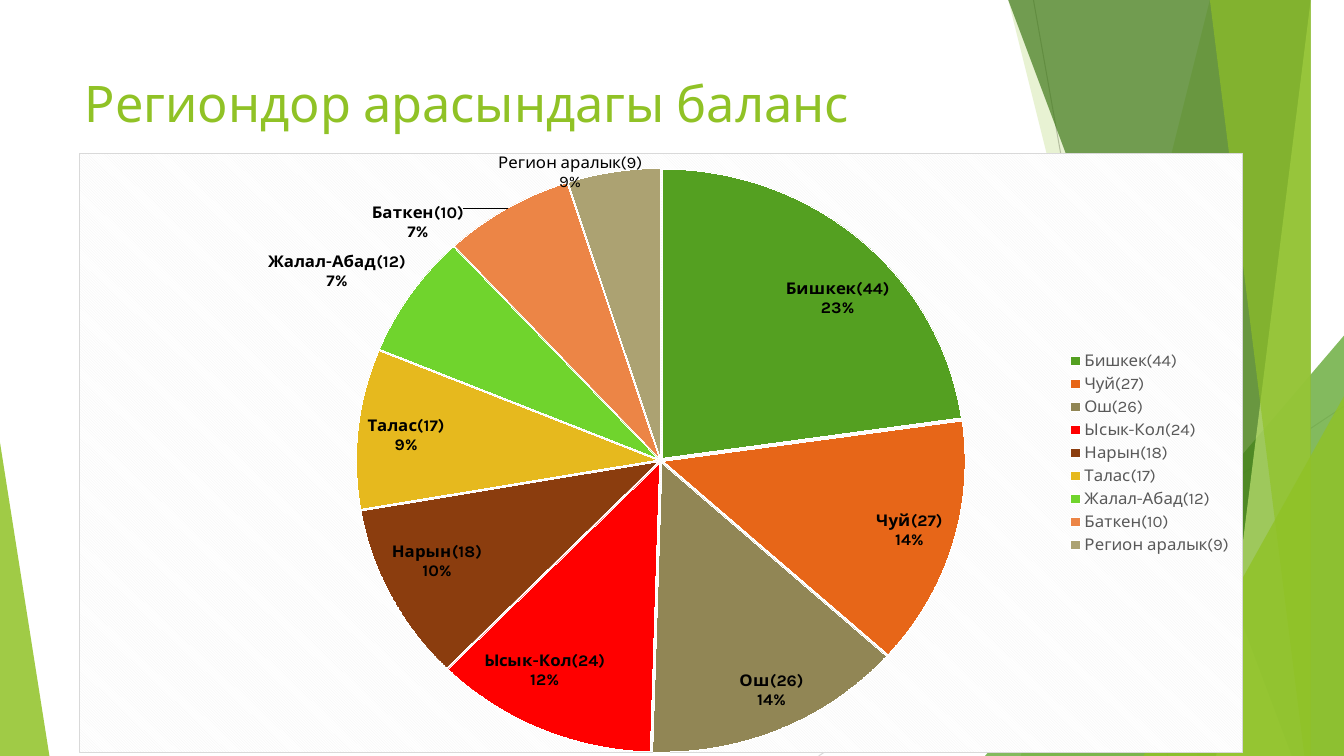
from dataclasses import dataclass

from lxml.etree import SubElement
from pptx import Presentation
from pptx.chart.data import CategoryChartData
from pptx.dml.color import RGBColor
from pptx.enum.chart import XL_CHART_TYPE, XL_LABEL_POSITION, XL_LEGEND_POSITION
from pptx.enum.shapes import MSO_CONNECTOR, MSO_SHAPE
from pptx.enum.text import MSO_ANCHOR, PP_ALIGN
from pptx.oxml import parse_xml
from pptx.oxml.ns import nsdecls, qn
from pptx.util import Inches, Pt


@dataclass(frozen=True)
class Theme:
    font: str = "Karla"
    lime: str = "90C226"
    green: str = "54A021"
    forest: str = "3F7819"
    pale: str = "C0E474"
    white: str = "FFFFFF"
    black: str = "000000"
    legend_grey: str = "595959"
    hatch: str = "F2F2F2"
    border: str = "D9D9D9"
    rule: str = "BFBFBF"
    title_size: int = 36
    chart_size: int = 10
    label_size: int = 12
    hairline: float = 0.75


THEME = Theme()
WIDTH, HEIGHT = 13.33, 7.5

REGIONS = [
    ("Бишкек(44)", 23, THEME.green),
    ("Чуй(27)", 14, "E76618"),
    ("Ош(26)", 14, "918655"),
    ("Ысык-Кол(24)", 12, "FF0000"),
    ("Нарын(18)", 10, "8B3D0E"),
    ("Талас(17)", 9, "E6B91E"),
    ("Жалал-Абад(12)", 7, "70D42D"),
    ("Баткен(10)", 7, "EC8546"),
    ("Регион аралык(9)", 5, "ACA272"),
]


def style_font(font, size, color, bold=False):
    font.name = THEME.font
    font.size = Pt(size)
    font.bold = bold
    font.color.rgb = RGBColor.from_string(color)


def paint(shape, color, opacity):
    shape.shadow.inherit = False
    shape.fill.solid()
    shape.fill.fore_color.rgb = RGBColor.from_string(color)
    tint = shape._element.spPr.find(qn("a:solidFill"))[0]
    SubElement(tint, qn("a:alpha"), val=str(opacity * 1000))
    shape.line.fill.background()


def add_rule(slide, start, end, color):
    rule = slide.shapes.add_connector(
        MSO_CONNECTOR.STRAIGHT, *(Inches(v) for v in (*start, *end)))
    rule.line.color.rgb = RGBColor.from_string(color)
    rule.line.width = Pt(THEME.hairline)
    SubElement(rule._element.spPr, qn("a:effectLst"))


def add_band(slide, top_left, bottom_left, color, opacity):
    outline = slide.shapes.build_freeform(top_left, -0.01, scale=Inches(1))
    outline.add_line_segments(
        [(WIDTH, -0.01), (WIDTH, HEIGHT), (bottom_left, HEIGHT)], close=True)
    paint(outline.convert_to_shape(), color, opacity)


def add_corner(slide, left, top, width, apex, color, opacity):
    corner = slide.shapes.add_shape(
        MSO_SHAPE.ISOSCELES_TRIANGLE, Inches(left), Inches(top),
        Inches(width), Inches(HEIGHT - top))
    corner.adjustments[0] = apex
    paint(corner, color, opacity)


def add_facets(slide):
    add_rule(slide, (10.25, 0), (11.58, HEIGHT), THEME.rule)
    add_rule(slide, (WIDTH, 4.03), (8.12, HEIGHT), THEME.border)
    add_band(slide, 12.28, 10.04, THEME.lime, 30)
    add_band(slide, 10.5, 11.83, THEME.lime, 20)
    add_corner(slide, 9.77, 3.33, 3.56, 1, THEME.green, 72)
    add_band(slide, 10.21, 12.91, THEME.forest, 70)
    add_band(slide, 13.03, 11.92, THEME.pale, 70)
    add_band(slide, 11.96, 13.18, THEME.lime, 65)
    add_corner(slide, 11.34, 3.93, 1.99, 1, THEME.lime, 80)
    add_corner(slide, 0, 4.39, 0.49, 0, THEME.lime, 85)


def set_title(slide, heading):
    title = slide.shapes.title
    title.left, title.top = Inches(0.74), Inches(0.67)
    title.width, title.height = Inches(9.4), Inches(1.44)
    title.text_frame.text = heading
    title.text_frame.vertical_anchor = MSO_ANCHOR.TOP
    paragraph = title.text_frame.paragraphs[0]
    paragraph.alignment = PP_ALIGN.LEFT
    style_font(paragraph.runs[0].font, THEME.title_size, THEME.lime)


def frame_chart(chart):
    backdrop = parse_xml(
        f'<c:spPr {nsdecls("c", "a")}><a:pattFill prst="dkDnDiag">'
        f'<a:fgClr><a:srgbClr val="{THEME.hatch}"/></a:fgClr>'
        f'<a:bgClr><a:srgbClr val="{THEME.white}"/></a:bgClr></a:pattFill>'
        f'<a:ln w="{Pt(THEME.hairline)}"><a:solidFill>'
        f'<a:srgbClr val="{THEME.border}"/></a:solidFill></a:ln></c:spPr>')
    chart._chartSpace.find(qn("c:txPr")).addprevious(backdrop)

    plot_area = chart._chartSpace.chart.plotArea
    for stale in plot_area.findall(qn("c:layout")):
        plot_area.remove(stale)
    plot_area.insert(0, parse_xml(
        f'<c:layout {nsdecls("c")}><c:manualLayout>'
        '<c:layoutTarget val="inner"/><c:xMode val="edge"/><c:yMode val="edge"/>'
        '<c:x val="0"/><c:y val="0.025"/><c:w val="1"/><c:h val="0.975"/>'
        '</c:manualLayout></c:layout>'))


def color_slices(series):
    series.format.line.color.rgb = RGBColor.from_string(THEME.white)
    series._element.find(qn("c:spPr")).addnext(
        parse_xml(f'<c:explosion {nsdecls("c")} val="1"/>'))
    for index, (_, _, color) in enumerate(REGIONS):
        piece = series.points[index].format
        piece.fill.solid()
        piece.fill.fore_color.rgb = RGBColor.from_string(color)
        piece.line.color.rgb = RGBColor.from_string(THEME.white)


def label_slices(series):
    labels = series.data_labels
    labels.show_category_name = True
    labels.show_percentage = True
    labels.show_value = False
    labels.number_format = "0%"
    labels.number_format_is_linked = False
    labels.position = XL_LABEL_POSITION.BEST_FIT
    style_font(labels.font, THEME.label_size, THEME.black, bold=True)
    separator = parse_xml(f'<c:separator {nsdecls("c")}>\n</c:separator>')
    labels._element.find(qn("c:showBubbleSize")).addnext(separator)

    interregional = series.points[len(REGIONS) - 1].data_label
    interregional.text_frame.text = f"{REGIONS[-1][0]}\n9%"
    interregional.position = XL_LABEL_POSITION.BEST_FIT
    for paragraph in interregional.text_frame.paragraphs:
        style_font(paragraph.runs[0].font, THEME.label_size, THEME.black)


def add_region_pie(slide):
    shares = CategoryChartData()
    shares.categories = [name for name, _, _ in REGIONS]
    shares.add_series("Series 1", [share for _, share, _ in REGIONS])
    chart = slide.shapes.add_chart(
        XL_CHART_TYPE.PIE, Inches(0.78), Inches(1.27),
        Inches(11.55), Inches(6.2), shares).chart
    style_font(chart.font, THEME.chart_size, THEME.black)
    chart.has_title = False
    chart.has_legend = True
    chart.legend.position = XL_LEGEND_POSITION.RIGHT
    chart.legend.include_in_layout = False
    style_font(chart.legend.font, THEME.label_size, THEME.legend_grey)
    frame_chart(chart)
    pie = chart.plots[0]
    pie.vary_by_categories = True
    color_slices(pie.series[0])
    label_slices(pie.series[0])


def main():
    deck = Presentation()
    deck.slide_width, deck.slide_height = Inches(WIDTH), Inches(HEIGHT)
    slide = deck.slides.add_slide(deck.slide_layouts[5])
    add_facets(slide)
    set_title(slide, "Региондор арасындагы баланс")
    add_region_pie(slide)
    deck.save("out.pptx")


if __name__ == "__main__":
    main()
